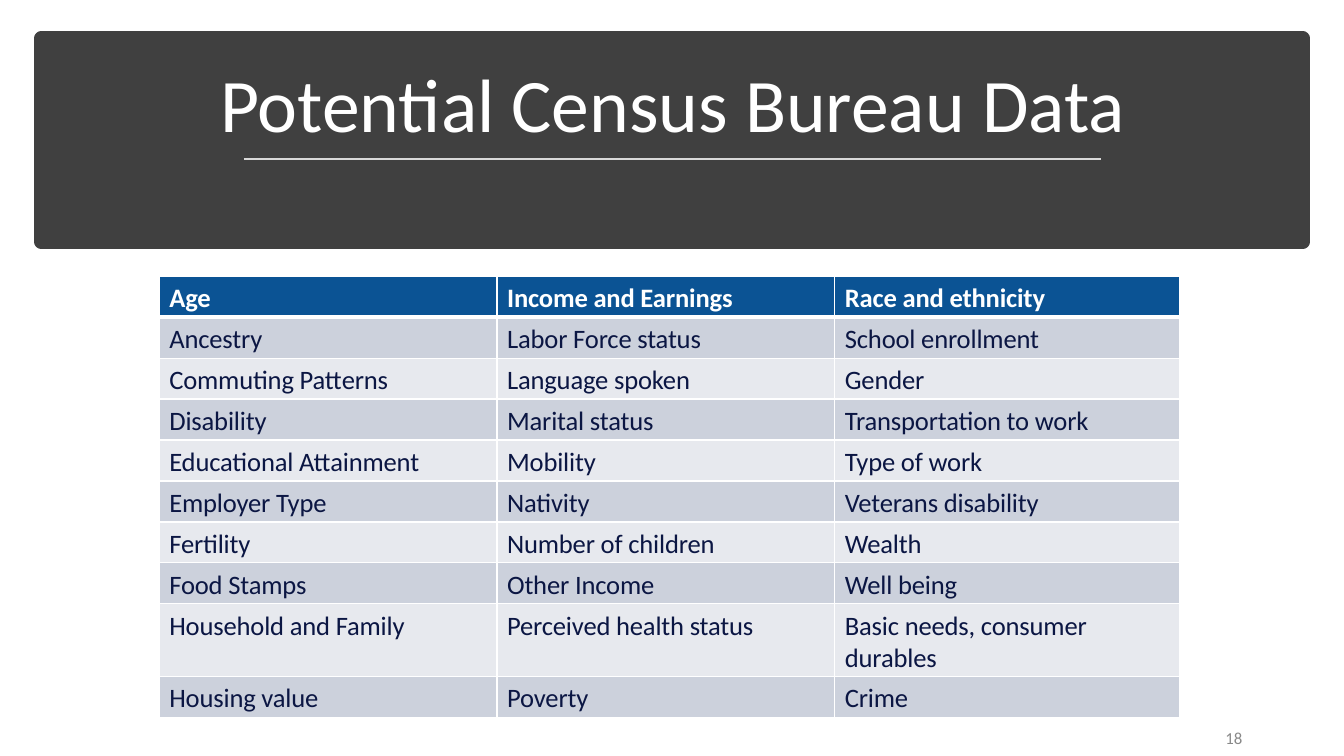
from dataclasses import dataclass

import lxml.etree
import pptx
import pptx.dml.color
import pptx.enum.shapes
import pptx.enum.text
import pptx.oxml.ns
import pptx.util

Inches = pptx.util.Inches
Pt = pptx.util.Pt
Align = pptx.enum.text.PP_ALIGN
Anchor = pptx.enum.text.MSO_ANCHOR
qn = pptx.oxml.ns.qn


@dataclass(frozen=True)
class Theme:
    font: str = "Calibri"
    white: str = "FFFFFF"
    banner: str = "404040"
    rule: str = "D9D9D9"
    header: str = "0B5394"
    bands: tuple = ("CCD1DC", "E7E9EE")
    ink: str = "0B1643"
    muted: str = "898989"
    title_size: int = 54
    cell_size: int = 19
    number_size: int = 12


THEME = Theme()

DATA_TOPICS = [
    ("Age", "Income and Earnings", "Race and ethnicity"),
    ("Ancestry", "Labor Force status", "School enrollment"),
    ("Commuting Patterns", "Language spoken", "Gender"),
    ("Disability", "Marital status", "Transportation to work"),
    ("Educational Attainment", "Mobility", "Type of work"),
    ("Employer Type", "Nativity", "Veterans disability"),
    ("Fertility", "Number of children", "Wealth"),
    ("Food Stamps", "Other Income", "Well being"),
    ("Household and Family", "Perceived health status", "Basic needs, consumer durables"),
    ("Housing value", "Poverty", "Crime"),
]


def rgb(value):
    return pptx.dml.color.RGBColor.from_string(value)


def add_run(paragraph, words, size, color, bold=False, spacing=-10):
    """Add styled words; spacing is in hundredths of a point."""
    run = paragraph.add_run()
    run.text = words
    run.font.name = THEME.font
    run.font.size = Pt(size)
    run.font.bold = bold
    run.font.color.rgb = rgb(color)
    run.font.language_id = pptx.enum.lang.MSO_LANGUAGE_ID.ENGLISH_US
    run._r.get_or_add_rPr().set("spc", str(spacing))


def add_line_of_text(slide, left, top, width, height, anchor, align):
    """Add an empty text box and return its paragraph."""
    frame = slide.shapes.add_textbox(
        Inches(left), Inches(top), Inches(width), Inches(height)).text_frame
    frame.word_wrap = True
    frame.vertical_anchor = anchor
    paragraph = frame.paragraphs[0]
    paragraph.alignment = align
    return paragraph


def add_banner(slide, left, top, width, height):
    """Draw the dark band with the title and the rule beneath it."""
    band = slide.shapes.add_shape(
        pptx.enum.shapes.MSO_SHAPE.RECTANGLE,
        Inches(left), Inches(top), Inches(width), Inches(height))
    band.shadow.inherit = False
    band.fill.solid()
    band.fill.fore_color.rgb = rgb(THEME.banner)
    band.line.color.rgb = rgb(THEME.banner)
    band.line.width = Pt(10)

    title = add_line_of_text(slide, left + 0.17, top + 0.13, width - 0.33, 1.02,
                             Anchor.BOTTOM, Align.CENTER)
    title.line_spacing = 0.9
    add_run(title, "Potential Census Bureau ", THEME.title_size, THEME.white, spacing=0)
    add_run(title, "Data", THEME.title_size, THEME.white)

    rule_y = Inches(top + 1.2)
    rule = slide.shapes.add_connector(
        pptx.enum.shapes.MSO_CONNECTOR.STRAIGHT,
        Inches(left + 2.01), rule_y, Inches(left + width - 2), rule_y)
    rule.line.color.rgb = rgb(THEME.rule)
    rule.line.width = Pt(1.75)
    lxml.etree.SubElement(rule._element.spPr, qn("a:effectLst"))


def add_borders(cell, bottom, top):
    """Give a cell white borders; top and bottom widths are in points."""
    properties = cell._tc.get_or_add_tcPr()
    for side, width in (("L", 1), ("R", 1), ("T", top), ("B", bottom)):
        border = lxml.etree.SubElement(properties, qn(f"a:ln{side}"), w=str(Pt(width)))
        fill = lxml.etree.SubElement(border, qn("a:solidFill"))
        lxml.etree.SubElement(fill, qn("a:srgbClr"), val=THEME.white)


def fill_cell(cell, words, row):
    is_header = row == 0
    add_borders(cell, bottom=3 if is_header else 1, top=3 if row == 1 else 1)
    cell.fill.solid()
    cell.fill.fore_color.rgb = rgb(THEME.header if is_header else THEME.bands[(row - 1) % 2])
    cell.margin_left = Inches(0.1)
    cell.margin_top = Inches(0.06)
    cell.margin_right = cell.margin_bottom = 0
    paragraph = cell.text_frame.paragraphs[0]
    paragraph.space_before = Pt(3.2)
    add_run(paragraph, words, THEME.cell_size,
            THEME.white if is_header else THEME.ink, bold=is_header)


def add_topic_table(slide, left, top, width, height):
    wrapped_row, wrapped_height = 8, 0.72
    row_height = (height - wrapped_height) / (len(DATA_TOPICS) - 1)
    column_widths = (3.35, 3.35, width - 2 * 3.35)
    table = slide.shapes.add_table(
        len(DATA_TOPICS), len(column_widths),
        Inches(left), Inches(top), Inches(width), Inches(height)).table
    for column, column_width in zip(table.columns, column_widths):
        column.width = Inches(column_width)
    for row, topics in enumerate(DATA_TOPICS):
        table.rows[row].height = Inches(wrapped_height if row == wrapped_row else row_height)
        for column, topic in enumerate(topics):
            fill_cell(table.cell(row, column), topic, row)


def add_slide_number(slide, left, top, width, height):
    number = add_line_of_text(slide, left, top, width, height, Anchor.MIDDLE, Align.RIGHT)
    add_run(number, "18", THEME.number_size, THEME.muted)


def main():
    deck = pptx.Presentation()
    deck.slide_width = Inches(13.33)
    deck.slide_height = Inches(7.5)
    slide = deck.slides.add_slide(deck.slide_layouts[6])
    add_banner(slide, 0.41, 0.38, 12.51, 2.02)
    add_slide_number(slide, 9.42, 7.13, 3, 0.38)
    add_topic_table(slide, 1.58, 2.74, 10.12, 4.38)
    deck.save("out.pptx")


if __name__ == "__main__":
    import pptx.enum.lang
    main()
